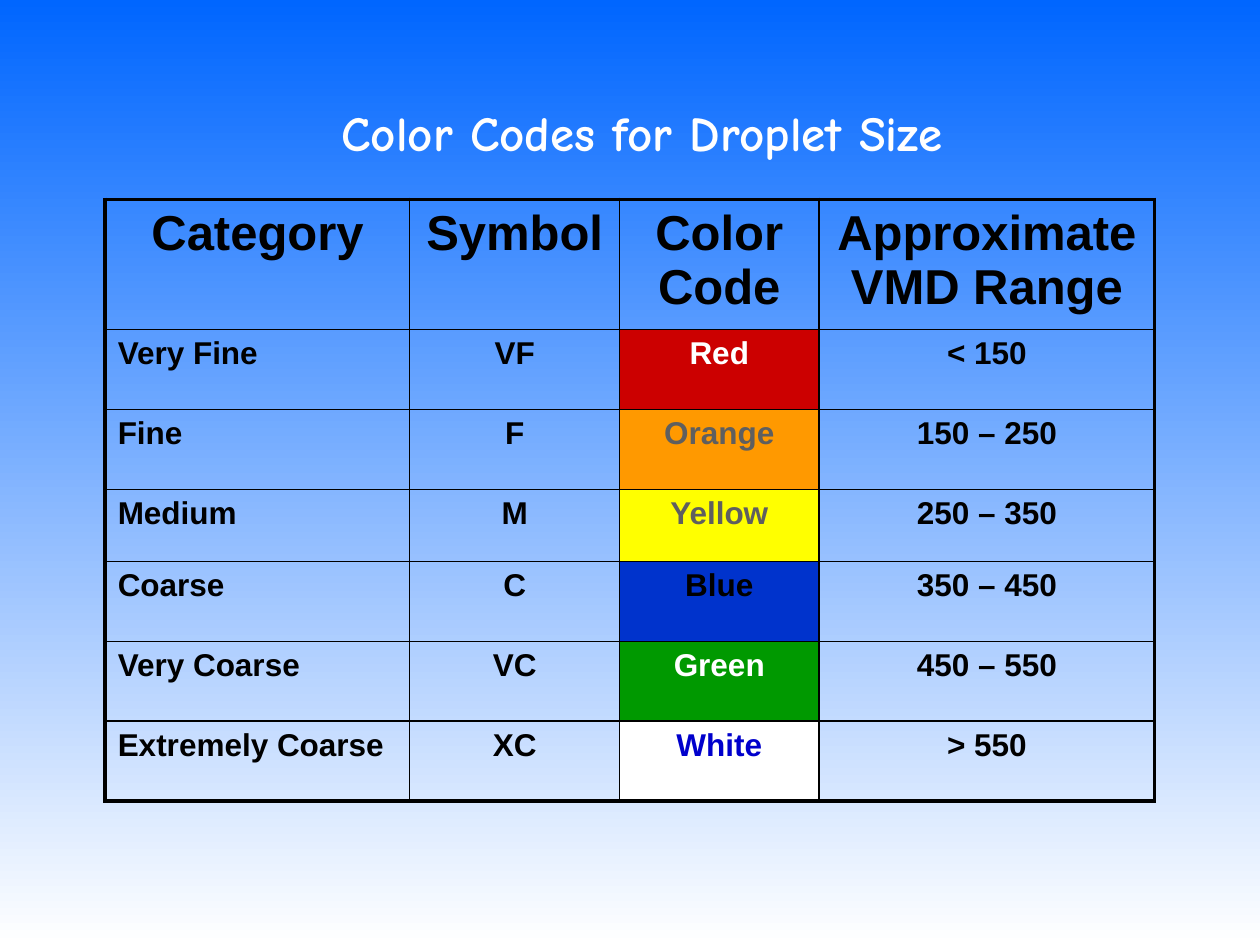
from lxml.etree import SubElement
from pptx import Presentation
from pptx.dml.color import RGBColor
from pptx.enum.text import MSO_ANCHOR, PP_ALIGN
from pptx.oxml.ns import qn
from pptx.util import Cm, Pt

COLORS = {
    "sky": "0066FF",
    "white": "FFFFFF",
    "black": "000000",
    "gray": "5F5F5F",
    "red": "CC0000",
    "orange": "FF9900",
    "yellow": "FFFF00",
    "blue": "0033CC",
    "green": "009900",
    "navy": "0000CC",
}
HEADINGS = ["Category", "Symbol", "Color Code", "Approximate VMD Range"]
DROPLETS = [
    ("Very Fine", "VF", "Red", "< 150", "white"),
    ("Fine", "F", "Orange", "150 – 250", "gray"),
    ("Medium", "M", "Yellow", "250 – 350", "gray"),
    ("Coarse", "C", "Blue", "350 – 450", "black"),
    ("Very Coarse", "VC", "Green", "450 – 550", "white"),
    ("Extremely Coarse", "XC", "White", "> 550", "navy"),
]
COLUMN_WIDTHS = [6.14, 4.23, 4.02, 6.77]
ROW_HEIGHTS = [2.62, 1.61, 1.61, 1.45, 1.61, 1.61, 1.61]
CODE_COLUMN = 2
OUTER, INNER = Pt(2.25), Pt(1)


def rgb(name):
    return RGBColor.from_string(COLORS[name])


def style_paragraph(paragraph, size, face, color, align):
    paragraph.alignment = align
    paragraph.font.size = Pt(size)
    paragraph.font.name = face
    paragraph.font.bold = True
    paragraph.font.color.rgb = rgb(color)


def paint_background(slide):
    fill = slide.background.fill
    fill.gradient()
    fill.gradient_angle = 270
    for stop, color in zip(fill.gradient_stops, ("sky", "white")):
        stop.color.rgb = rgb(color)


def add_title(slide, left, top, width, height):
    title = slide.shapes.add_textbox(Cm(left), Cm(top), Cm(width), Cm(height))
    frame = title.text_frame
    frame.word_wrap = True
    frame.vertical_anchor = MSO_ANCHOR.BOTTOM
    frame.text = "Color Codes for Droplet Size"
    style_paragraph(frame.paragraphs[0], 28, "Comic Neue", "white", PP_ALIGN.CENTER)


def draw_borders(cell, row, column):
    at_edge = {
        "a:lnL": column == 0,
        "a:lnR": column == len(HEADINGS) - 1,
        "a:lnT": row == 0,
        "a:lnB": row == len(DROPLETS),
    }
    properties = cell._tc.get_or_add_tcPr()
    for side, outer in at_edge.items():
        border = SubElement(properties, qn(side), w=str(OUTER if outer else INNER))
        paint = SubElement(border, qn("a:solidFill"))
        SubElement(paint, qn("a:srgbClr"), val=COLORS["black"])


def fill_cell(cell, row, column, wording, text_color):
    draw_borders(cell, row, column)
    coded = row > 0 and column == CODE_COLUMN
    if coded:
        cell.fill.solid()
        cell.fill.fore_color.rgb = rgb(wording.lower())
    else:
        cell.fill.background()
    cell.text = wording
    align = PP_ALIGN.LEFT if row > 0 and column == 0 else PP_ALIGN.CENTER
    style_paragraph(cell.text_frame.paragraphs[0], 18 if row else 28, "Arial",
                    text_color if coded else "black", align)


def add_droplet_table(slide, left, top):
    table = slide.shapes.add_table(
        len(ROW_HEIGHTS), len(COLUMN_WIDTHS), Cm(left), Cm(top),
        Cm(sum(COLUMN_WIDTHS)), Cm(sum(ROW_HEIGHTS))).table
    table.first_row = False
    table.horz_banding = False
    for column, width in zip(table.columns, COLUMN_WIDTHS):
        column.width = Cm(width)
    for row, height in zip(table.rows, ROW_HEIGHTS):
        row.height = Cm(height)
    for row, (*wordings, text_color) in enumerate([(*HEADINGS, "black"), *DROPLETS]):
        for column, wording in enumerate(wordings):
            fill_cell(table.cell(row, column), row, column, wording, text_color)


def main():
    presentation = Presentation()
    presentation.slide_width = Cm(25.4)
    presentation.slide_height = Cm(19.05)
    slide = presentation.slides.add_slide(presentation.slide_layouts[6])
    paint_background(slide)
    add_title(slide, 2.74, 1.63, 20.4, 1.75)
    add_droplet_table(slide, 2.12, 4.02)
    presentation.save("out.pptx")


if __name__ == "__main__":
    main()
